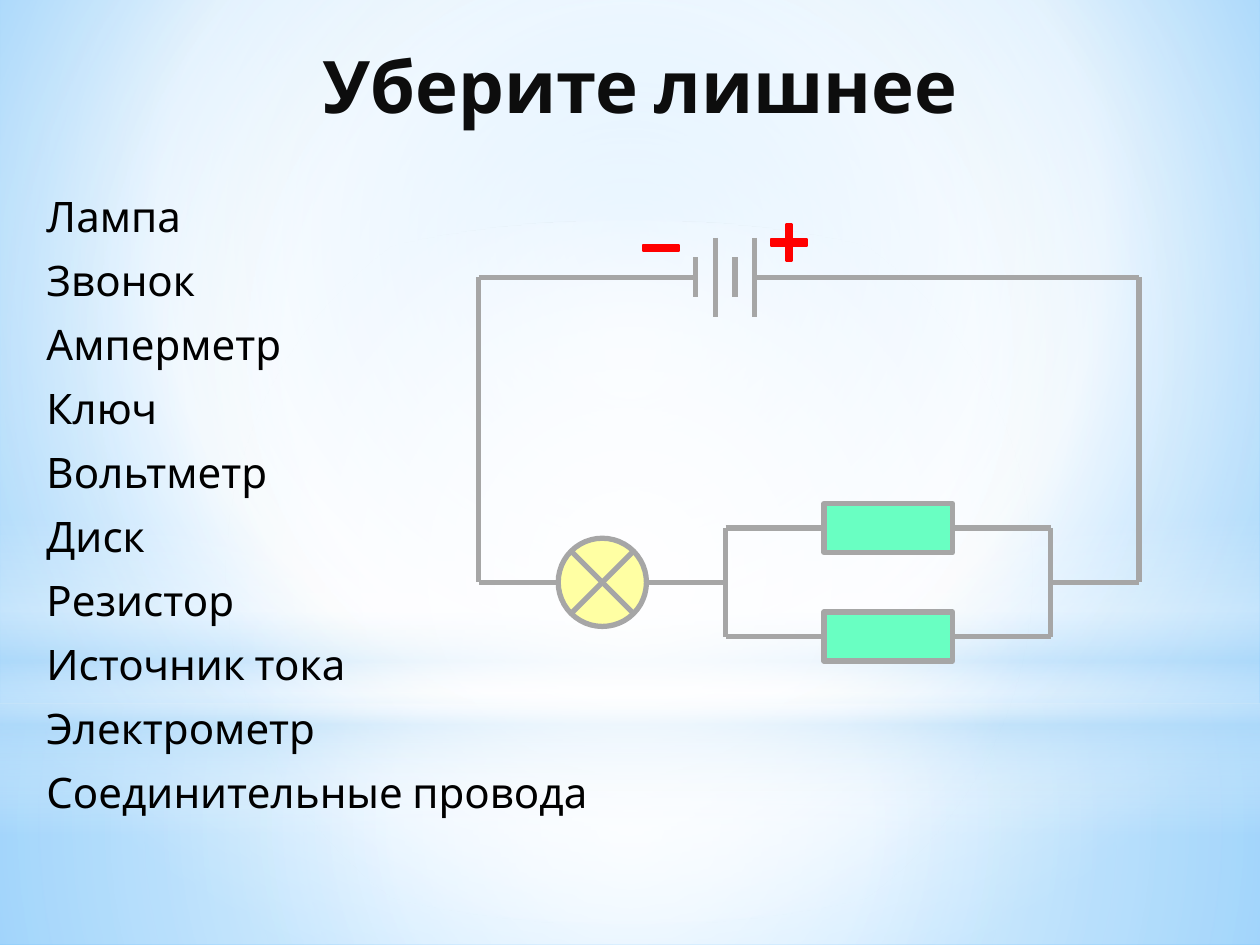
import pptx
import pptx.dml.color
import pptx.enum.shapes
import pptx.enum.text
import pptx.oxml
import pptx.oxml.ns
import pptx.util
from lxml import etree

Pt = pptx.util.Pt
SHAPE = pptx.enum.shapes.MSO_SHAPE
ANCHOR = pptx.enum.text.MSO_ANCHOR
FONT = "Cabin"
WIRE, RED, LAMP, RESISTOR = "A6A6A6", "FF0000", "FFFFA3", "69FFC2"
WORDS = ["Лампа", "Звонок", "Амперметр", "Ключ", "Вольтметр", "Диск",
         "Резистор", "Источник тока", "Электрометр", "Соединительные провода"]
CENTRE = (50, 50, 50, 50)
# preset, box, stops (position, colour, opacity), focus of a circular gradient
GLOWS = [
    (SHAPE.RECTANGLE, (0, 401.8, 720, 138.2),
     [(0, "FFFFFF", 91), (37, "FFFFFF", 76), (100, "B4DCFA", 79)], CENTRE),
    (SHAPE.RECTANGLE, (0, 0, 720, 401.8),
     [(0, "FFFFFF", 89), (48, "FFFFFF", 62), (100, "B4DCFA", 79)], CENTRE),
    (SHAPE.RECTANGLE, (0, 296.6, 720, 180),
     [(0, "FFFFFF", 0), (29, "FFFFFF", 30), (45, "B4DCFA", 40),
      (55, "FFFFFF", 26), (65, "B4DCFA", 60), (100, "FFFFFF", 0)], None),
    (SHAPE.OVAL, (0, 126, 720, 401.8),
     [(0, "FFFFFF", 100), (56, "FFFFFF", 0)], CENTRE),
]


def rgb(colour):
    return pptx.dml.color.RGBColor.from_string(colour)


def set_gradient(fill, props, stops, focus):
    """Fill with a circular gradient, or a vertical one when focus is None."""
    fill.gradient()
    grad = props.find(pptx.oxml.ns.qn("a:gradFill"))
    gs = "".join(
        f'<a:gs pos="{pos * 1000}"><a:srgbClr val="{colour}">'
        f'<a:alpha val="{alpha * 1000}"/></a:srgbClr></a:gs>'
        for pos, colour, alpha in stops)
    if focus:
        sides = " ".join(f'{k}="{v * 1000}"' for k, v in zip("ltrb", focus))
        shade = f'<a:path path="circle"><a:fillToRect {sides}/></a:path>'
    else:
        shade = '<a:lin ang="5400000" scaled="0"/>'
    new = pptx.oxml.parse_xml(
        f'<a:gradFill {pptx.oxml.ns.nsdecls("a")} rotWithShape="1">'
        f'<a:gsLst>{gs}</a:gsLst>{shade}</a:gradFill>')
    props.replace(grad, new)


def add_backdrop(s):
    bg = s.background
    fill = bg.fill
    props = s.element.find(".//" + pptx.oxml.ns.qn("p:bgPr"))
    set_gradient(fill, props,
                 [(0, "9ED5FF", 100), (60, "FFFFFF", 100), (100, "5BB9FF", 100)],
                 (20, 10, 20, 60))
    for preset, box, stops, focus in GLOWS:
        sp = s.shapes.add_shape(preset, *map(Pt, box))
        sp.shadow.inherit = False
        sp.line.fill.background()
        set_gradient(sp.fill, sp.element.spPr, stops, focus)


def style_text(p, size, colour, bold=False):
    for r in p.runs:
        r.font.name, r.font.size, r.font.bold = FONT, Pt(size), bold
        r.font.color.rgb = rgb(colour)


def place_title(s, box):
    sp = s.shapes.title
    sp.left, sp.top, sp.width, sp.height = map(Pt, box)
    tf = sp.text_frame
    tf.text = "Уберите лишнее"
    tf.vertical_anchor = ANCHOR.MIDDLE
    p = tf.paragraphs[0]
    p.alignment = pptx.enum.text.PP_ALIGN.CENTER
    p.line_spacing = 0.9
    style_text(p, 41.4, "0D0D0D", bold=True)
    s.shapes._spTree.append(sp.element)  # in front of the backdrop


def add_word_list(s, box):
    tf = s.shapes.add_textbox(*map(Pt, box)).text_frame
    tf.word_wrap = True
    tf.margin_left = Pt(10.8)
    tf.text = "\n".join(WORDS)
    for p in tf.paragraphs:
        p.space_before, p.space_after = Pt(4.8), Pt(3)
        style_text(p, 24, "000000")
    tf.paragraphs[0].space_before = Pt(0)


def add_circuit(s, box):
    """Box corners are the corners of the outer wire loop."""
    left, top, width, height = box
    grp = s.shapes.add_group_shape()

    def wire(x1, y1, x2, y2):
        c = grp.shapes.add_connector(
            pptx.enum.shapes.MSO_CONNECTOR.STRAIGHT,
            Pt(left + x1), Pt(top + y1), Pt(left + x2), Pt(top + y2))
        c.line.color.rgb, c.line.width = rgb(WIRE), Pt(3)
        etree.SubElement(c.element.spPr, pptx.oxml.ns.qn("a:effectLst"))

    def part(preset, cx, cy, w, h, fill, line=WIRE, weight=3):
        sp = grp.shapes.add_shape(preset, Pt(left + cx - w / 2),
                                  Pt(top + cy - h / 2), Pt(w), Pt(h))
        sp.shadow.inherit = False
        sp.fill.solid()
        sp.fill.fore_color.rgb = rgb(fill)
        sp.line.color.rgb, sp.line.width = rgb(line), Pt(weight)
        return sp

    plates = [123.8 + 11.3 * i for i in range(4)]
    fork, join, lamp = 141.1, 326.9, 70.6
    resistor = (fork + join) / 2
    resistor_w, lamp_d = 73.4, 50.4
    piece, side_joint = 95.8, 112.3

    # wires along the top and bottom overlap where their pieces meet
    for x1, x2 in [(0, piece), (plates[0] - piece, plates[0]),
                   (plates[-1], plates[-1] + piece), (169.2, 311),
                   (298.1, width)]:
        wire(x1, 0, x2, 0)
    for x1, x2 in [(0, piece), (fork - piece, fork), (join, width)]:
        wire(x1, height, x2, height)
    for x in (0, width):
        wire(x, 0, x, side_joint)
        wire(x, side_joint, x, height)

    for x, half in zip(plates, [11.5, 22.5] * 2):
        wire(x, -half, x, half)
    part(SHAPE.MATH_MINUS, 104, -16.5, 28, 11.5,
         RED, RED, 1.25).adjustments[0] = 0.308
    part(SHAPE.MATH_PLUS, 177.4, -19.8, 28, 28,
         RED, RED, 1.25).adjustments[0] = 0.129

    for x in (fork, join):
        wire(x, height - 31, x, height + 31)
    for y in (height - 31, height + 31):
        wire(fork, y, resistor - resistor_w / 2, y)
        wire(resistor + resistor_w / 2, y, join, y)
        part(SHAPE.RECTANGLE, resistor, y, resistor_w, 28, RESISTOR)
    part(SHAPE.FLOWCHART_SUMMING_JUNCTION, lamp, height, lamp_d, lamp_d, LAMP)


def main():
    prs = pptx.Presentation()
    prs.slide_width, prs.slide_height = Pt(720), Pt(540)
    s = prs.slides.add_slide(prs.slide_layouts[5])
    add_backdrop(s)
    place_title(s, (41.8, 20.9, 648, 61.2))
    add_word_list(s, (15.8, 105.1, 329, 433.4))
    add_circuit(s, (273.6, 158.4, 377.3, 174.4))
    prs.save("out.pptx")


if __name__ == "__main__":
    main()
